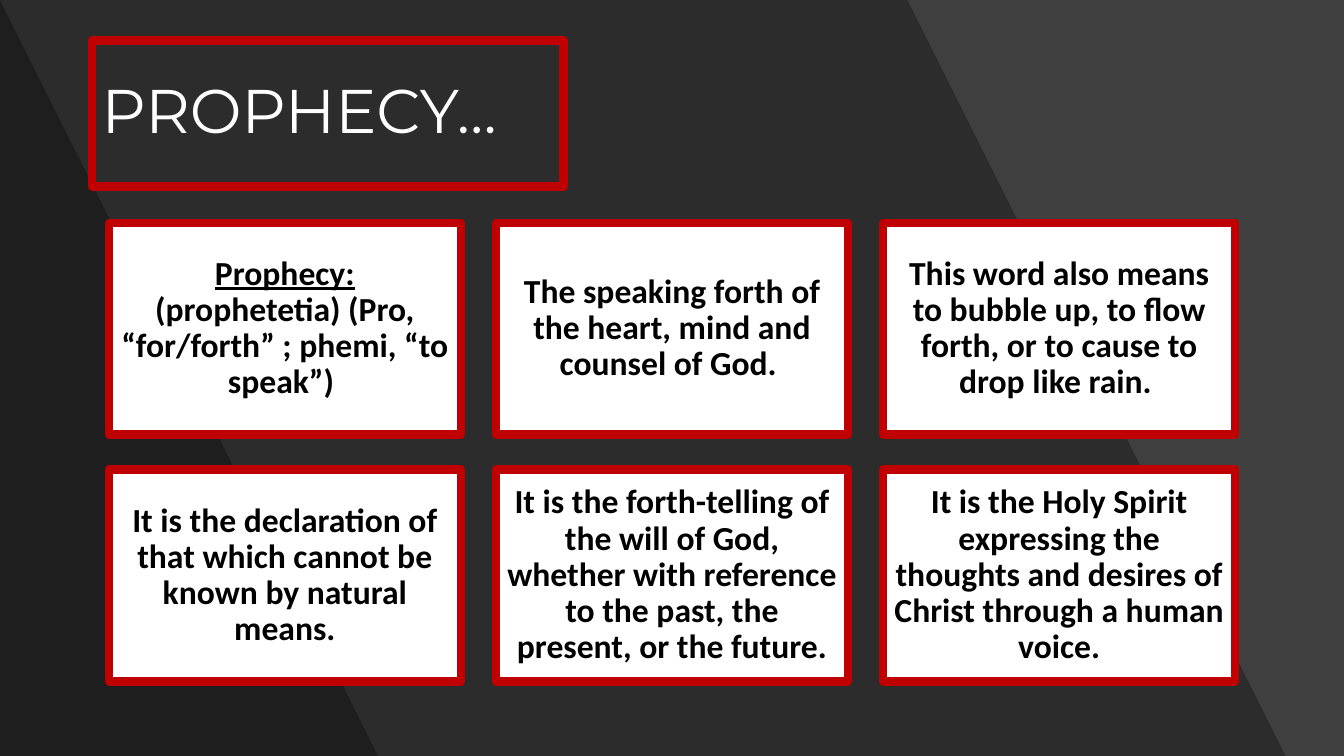
from dataclasses import dataclass

from lxml.etree import SubElement
from pptx import Presentation
from pptx.dml.color import RGBColor
from pptx.enum.shapes import MSO_SHAPE as Preset
from pptx.enum.text import MSO_ANCHOR as Anchor, PP_ALIGN as Align
from pptx.oxml.ns import qn
from pptx.shapes.autoshape import Shape
from pptx.slide import Slide
from pptx.util import Inches, Pt

WHITE = RGBColor(0xFF, 0xFF, 0xFF)
BLACK = RGBColor(0x00, 0x00, 0x00)
RED = RGBColor(0xC0, 0x00, 0x00)
CHARCOAL = RGBColor(0x40, 0x40, 0x40)

SLIDE_WIDTH, SLIDE_HEIGHT = 13.33, 7.5
GRID_LEFT, GRID_TOP = 1.08, 2.21
CARD_WIDTH, CARD_HEIGHT = 3.49, 2.1
GAP = 0.35
COLUMNS = 3
SHADE_ALPHA = 30


@dataclass(frozen=True)
class Shade:
    """A dark slanted band; its right edge runs from top to bottom, in inches."""
    top_right: float
    bottom_right: float


@dataclass(frozen=True)
class Frame:
    left: float
    top: float
    width: float
    height: float


@dataclass(frozen=True)
class Card:
    text: str
    term: str = ""


SHADES = (Shade(9.42, 12.89), Shade(0.44, 3.92))
TITLE_FRAME = Frame(0.91, 0.4, 4.68, 1.45)
CARDS = (
    Card("(prophetetia) (Pro, “for/forth” ; phemi, “to speak”) ", term="Prophecy: "),
    Card("The speaking forth of the heart, mind and counsel of God. "),
    Card("This word also means to bubble up, to flow forth, or to cause to drop like rain. "),
    Card("It is the declaration of that which cannot be known by natural means."),
    Card("It is the forth-telling of the will of God, whether with reference "
         "to the past, the present, or the future."),
    Card("It is the Holy Spirit expressing the thoughts and desires of Christ "
         "through a human voice."),
)


def draw_shade(slide: Slide, shade: Shade) -> None:
    outline = slide.shapes.build_freeform(0, 0, scale=Inches(1))
    outline.add_line_segments([
        (shade.top_right, 0),
        (shade.bottom_right, SLIDE_HEIGHT),
        (0, SLIDE_HEIGHT),
    ], close=True)
    band = outline.convert_to_shape()
    band.shadow.inherit = False
    band.line.fill.background()
    band.fill.solid()
    band.fill.fore_color.rgb = BLACK
    color = band.fill._xPr.find(qn("a:solidFill"))[0]
    SubElement(color, qn("a:alpha"), val=str(SHADE_ALPHA * 1000))


def draw_frame(slide: Slide, frame: Frame) -> Shape:
    """Add an unfilled box with the red border."""
    box = slide.shapes.add_shape(
        Preset.RECTANGLE, Inches(frame.left), Inches(frame.top),
        Inches(frame.width), Inches(frame.height))
    box.shadow.inherit = False
    box.fill.background()
    box.line.color.rgb = RED
    box.line.width = Pt(6)
    box.text_frame.word_wrap = True
    box.text_frame.vertical_anchor = Anchor.MIDDLE
    return box


def draw_title(slide: Slide, text: str) -> None:
    box = draw_frame(slide, TITLE_FRAME)
    box.text_frame.text = text
    paragraph = box.text_frame.paragraphs[0]
    paragraph.alignment = Align.LEFT
    paragraph.line_spacing = 0.9
    font = paragraph.runs[0].font
    font.name, font.size = "Montserrat", Pt(44)
    font.color.rgb = WHITE


def draw_card(slide: Slide, card: Card, index: int) -> None:
    row, column = divmod(index, COLUMNS)
    box = draw_frame(slide, Frame(
        GRID_LEFT + column * (CARD_WIDTH + GAP),
        GRID_TOP + row * (CARD_HEIGHT + GAP),
        CARD_WIDTH, CARD_HEIGHT))
    box.fill.solid()
    box.fill.fore_color.rgb = WHITE

    content = box.text_frame
    content.margin_left = content.margin_right = Inches(0.1)
    content.margin_top = content.margin_bottom = Inches(0.1)
    paragraph = content.paragraphs[0]
    paragraph.alignment = Align.CENTER
    paragraph.line_spacing = 0.9
    for wording in filter(None, (card.term, card.text)):
        run = paragraph.add_run()
        run.text = wording
        run.font.name, run.font.size = "Calibri", Pt(24)
        run.font.bold = True
        run.font.underline = wording == card.term
        run.font.color.rgb = BLACK


def main() -> None:
    deck = Presentation()
    deck.slide_width, deck.slide_height = Inches(SLIDE_WIDTH), Inches(SLIDE_HEIGHT)
    slide = deck.slides.add_slide(deck.slide_layouts[6])
    slide.background.fill.solid()
    slide.background.fill.fore_color.rgb = CHARCOAL

    for shade in SHADES:
        draw_shade(slide, shade)
    draw_title(slide, "PROPHECY…")
    for index, card in enumerate(CARDS):
        draw_card(slide, card, index)
    deck.save("out.pptx")


if __name__ == "__main__":
    main()
